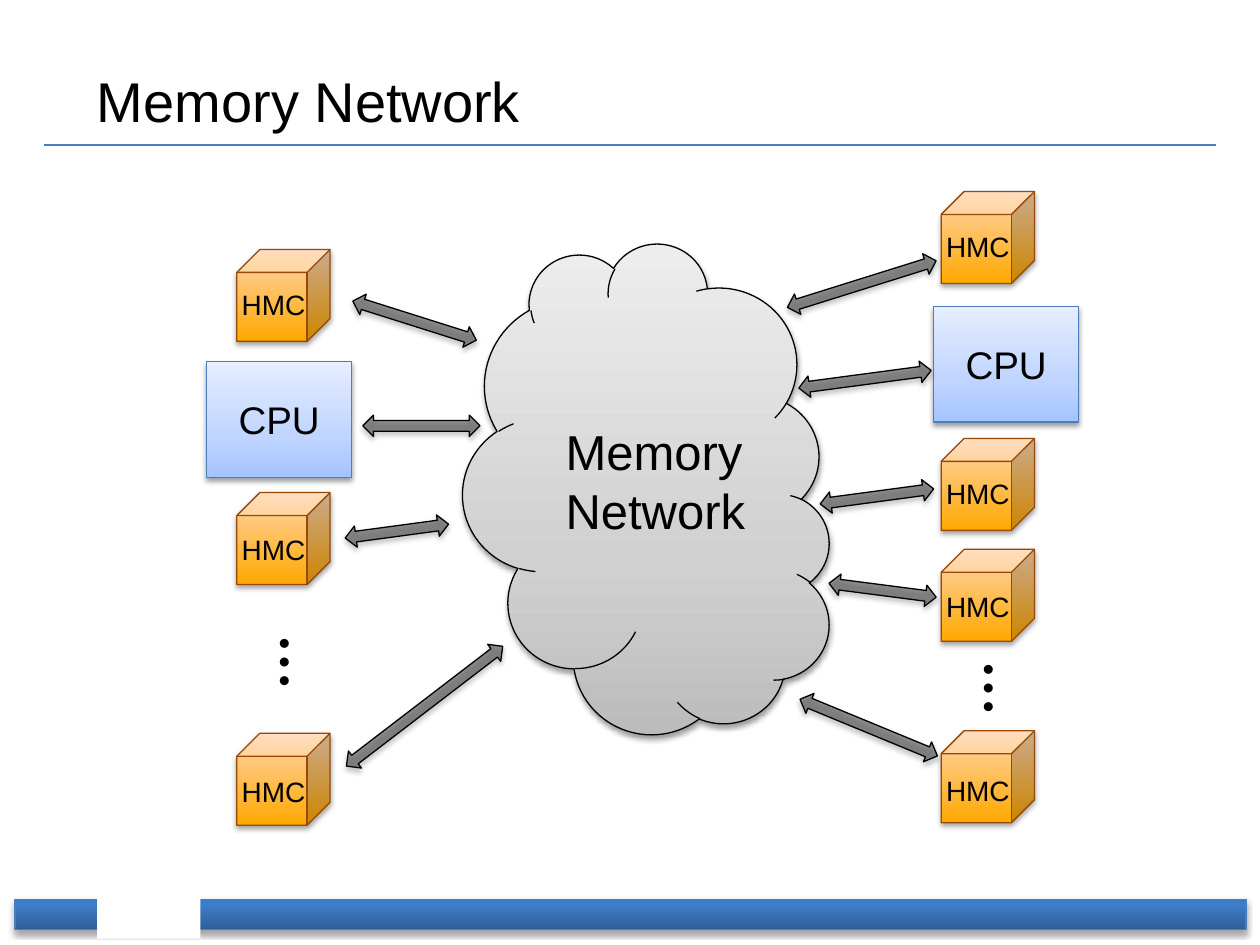
import math
from dataclasses import dataclass

import lxml.etree
import pptx
import pptx.dml.color
import pptx.enum.shapes
import pptx.enum.text
import pptx.oxml.ns
import pptx.util

PX = 9144  # 100 px to the inch
SHAPES = pptx.enum.shapes.MSO_SHAPE
ANCHOR = pptx.enum.text.MSO_ANCHOR
ALIGN = pptx.enum.text.PP_ALIGN
qn = pptx.oxml.ns.qn


@dataclass(frozen=True)
class Theme:
    font: str = "Arial"
    dots_font: str = "Noto Sans CJK KR"
    title_size: int = 32
    cloud_size: int = 28
    cpu_size: int = 22
    cube_size: int = 16
    dots_size: int = 32
    line_width: float = 0.75
    ink: str = "000000"
    paper: str = "FFFFFF"
    blue: str = "4B7EBC"
    brown: str = "984807"
    arrow: str = "404040"
    arrow_alpha: int = 56
    bar: tuple = ((0, "2F5F99"), (80, "3D7CC7"), (100, "3A7CCB"))
    cube: tuple = ((0, "FFA800"), (100, "FFD5AF"))
    cpu: tuple = ((0, "A4C4FF"), (35, "BFD4FF"), (100, "E6EEFF"))
    cloud: tuple = ((0, "EDEDED"), (65, "D0D0D0"), (100, "BCBCBC"))


THEME = Theme()


def rgb(value):
    return pptx.dml.color.RGBColor.from_string(value)


def add_child(parent, tag, **attributes):
    values = {name: str(value) for name, value in attributes.items()}
    return lxml.etree.SubElement(parent, qn(tag), values)


def add_color(parent, color, alpha=None):
    element = add_child(parent, "a:srgbClr", val=color)
    if alpha is not None:
        add_child(element, "a:alpha", val=alpha * 1000)


def fill_gradient(shape, stops, angle):
    shape.fill.gradient()
    shape.fill.gradient_angle = angle
    stop_list = shape._element.spPr.find(qn("a:gradFill")).find(qn("a:gsLst"))
    for stop in list(stop_list):
        stop_list.remove(stop)
    for position, color in stops:
        add_color(add_child(stop_list, "a:gs", pos=position * 1000), color)


def add_shape(slide, kind, box, fill, line=None, angle=90, alpha=None, shadow=35):
    shape = slide.shapes.add_shape(kind, *(round(value * PX) for value in box))
    if isinstance(fill, tuple):
        fill_gradient(shape, fill, angle)
    else:
        shape.fill.solid()
        shape.fill.fore_color.rgb = rgb(fill)
        if alpha is not None:
            solid = shape._element.spPr.find(qn("a:solidFill"))
            add_child(solid[0], "a:alpha", val=alpha * 1000)
    if line:
        shape.line.color.rgb = rgb(line)
        shape.line.width = pptx.util.Pt(THEME.line_width)
    else:
        shape.line.fill.background()
    shape.shadow.inherit = False
    if shadow:
        effects = shape._element.spPr.find(qn("a:effectLst"))
        outer = add_child(effects, "a:outerShdw", blurRad=40000, dist=23000,
                          dir=5400000, rotWithShape=0)
        add_color(outer, THEME.ink, shadow)
    return shape


def write_text(shape, text, size, font=THEME.font, bold=False, align=ALIGN.LEFT,
               anchor=ANCHOR.TOP, wrap=True):
    frame = shape.text_frame
    frame.word_wrap = wrap
    frame.vertical_anchor = anchor
    frame.text = text
    for paragraph in frame.paragraphs:
        paragraph.alignment = align
        for run in paragraph.runs:
            run.font.name = font
            run.font.size = pptx.util.Pt(size)
            run.font.bold = bold
            run.font.color.rgb = rgb(THEME.ink)
            add_child(run.font._element, "a:ea", typeface=font)


def add_text(slide, box, text, size, **text_format):
    shape = slide.shapes.add_textbox(*(value * PX for value in box))
    write_text(shape, text, size, **text_format)
    return shape


def add_arrow(slide, start, end, thickness=17):
    (x1, y1), (x2, y2) = start, end
    length = math.hypot(x2 - x1, y2 - y1)
    box = ((x1 + x2 - length) / 2, (y1 + y2 - thickness) / 2, length, thickness)
    shape = add_shape(slide, SHAPES.LEFT_RIGHT_ARROW, box, THEME.arrow,
                      line=THEME.ink, alpha=THEME.arrow_alpha)
    shape.rotation = math.degrees(math.atan2(y2 - y1, x2 - x1))


def add_heading(slide, box):
    left, top, width, height = box
    rule = slide.shapes.add_connector(
        pptx.enum.shapes.MSO_CONNECTOR.STRAIGHT,
        left * PX, (top + 86) * PX, (left + width) * PX, (top + 86) * PX)
    rule.line.color.rgb = rgb(THEME.blue)
    rule.line.width = pptx.util.Pt(THEME.line_width)
    add_child(rule._element.spPr, "a:effectLst")
    add_text(slide, (left + 32, top, 900, height), "Memory Network",
             THEME.title_size, anchor=ANCHOR.MIDDLE)


def add_footer(slide, box):
    left, top, width, height = box
    add_shape(slide, SHAPES.RECTANGLE, box, THEME.bar, line=THEME.blue)
    # Blank gap for the page number
    add_shape(slide, SHAPES.RECTANGLE, (left + 65, top - 8, 82, height + 15),
              THEME.paper, shadow=None)


def add_cloud(slide, box):
    left, top, width, height = box
    turned = (left + (width - height) / 2, top + (height - width) / 2, height, width)
    cloud = add_shape(slide, SHAPES.CLOUD, turned, THEME.cloud, line=THEME.ink,
                      angle=0, shadow=38)
    cloud.rotation = 90
    add_text(slide, (left + 71, top + 136, 165, 104), "Memory\nNetwork",
             THEME.cloud_size, wrap=False)


def add_side(slide, box, cpu, cubes, dots, arrows):
    """Place one column; all positions are offsets from the box corner."""
    left, top = box[:2]
    # Memory cubes, each with its label offset
    cube_left, cube_rows = cubes
    for row, label_drop in cube_rows:
        x, y = left + cube_left, top + row
        add_shape(slide, SHAPES.CUBE, (x, y, 74, 73), THEME.cube, line=THEME.brown)
        add_text(slide, (x - 6, y + label_drop, 71, 37), "HMC", THEME.cube_size,
                 wrap=False)
    # Processor
    processor = add_shape(slide, SHAPES.RECTANGLE,
                          (left + cpu[0], top + cpu[1], 115, 92),
                          THEME.cpu, line=THEME.blue, shadow=38)
    write_text(processor, "CPU", THEME.cpu_size, align=ALIGN.CENTER,
               anchor=ANCHOR.MIDDLE)
    # Vertical ellipsis
    ellipsis = add_text(slide, (left + dots[0], top + dots[1], 63, 64), "…",
                        THEME.dots_size, font=THEME.dots_font, bold=True, wrap=False)
    ellipsis.rotation = 90
    # Links to the cloud
    for x1, y1, x2, y2 in arrows:
        add_arrow(slide, (left + x1, top + y1), (left + x2, top + y2))


def main():
    presentation = pptx.Presentation()
    presentation.slide_width = 1000 * PX
    presentation.slide_height = 750 * PX
    slide = presentation.slides.add_slide(presentation.slide_layouts[6])

    add_footer(slide, (12, 714, 977, 24))
    add_heading(slide, (35, 29, 930, 101))
    add_cloud(slide, (368, 194, 291, 389))
    add_side(slide, (164, 198, 235, 457), cpu=(0, 89),
             cubes=(24, ((0, 25), (193, 27), (384, 28))), dots=(31, 295),
             arrows=((116, 41, 214, 72), (124, 140, 217, 140),
                     (110, 229, 192, 218), (111, 410, 235, 315)))
    add_side(slide, (625, 152, 231, 501), cpu=(116, 91),
             cubes=(122, ((0, 25), (196, 25), (284, 27), (428, 29))), dots=(129, 362),
             arrows=((0, 92, 118, 55), (9, 156, 114, 142), (26, 248, 116, 236),
                     (33, 311, 118, 322), (10, 403, 119, 448)))
    presentation.save("out.pptx")


if __name__ == "__main__":
    main()
